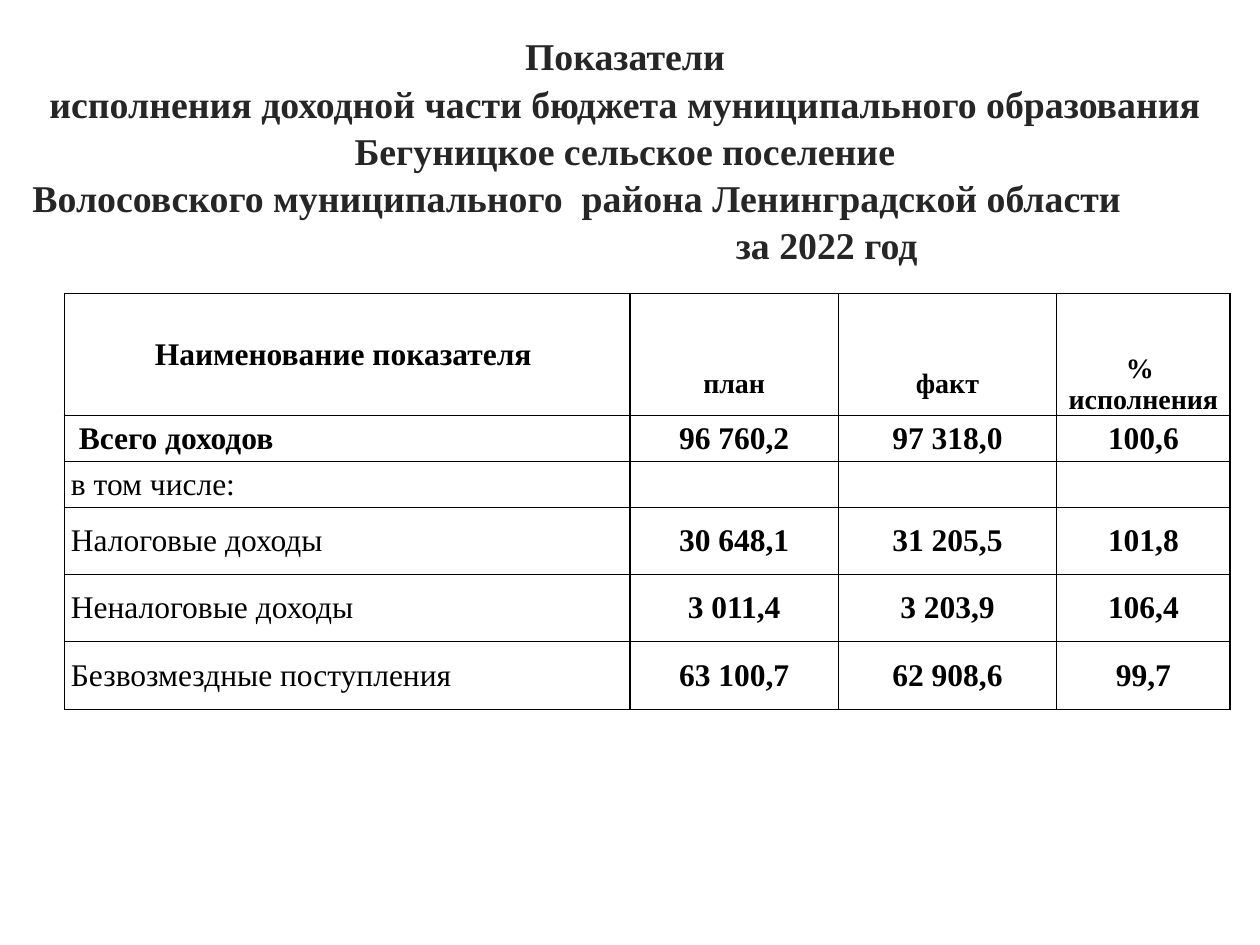
from lxml.etree import SubElement
from pptx import Presentation
from pptx.dml.color import RGBColor
from pptx.enum.text import MSO_ANCHOR, MSO_AUTO_SIZE, PP_ALIGN
from pptx.oxml.ns import qn
from pptx.util import Cm, Pt

COLORS = {"title": "262626", "text": "000000", "line": "000000", "cell": "FFFFFF"}
FONT = "Times New Roman"
LEFT, CENTER = PP_ALIGN.LEFT, PP_ALIGN.CENTER

TITLE = [
    ("Показатели", CENTER, 0),
    ("исполнения доходной части бюджета муниципального образования "
     "Бегуницкое сельское поселение", CENTER, 0),
    ("Волосовского муниципального  района Ленинградской области", LEFT, 0),
    ("за 2022 год", CENTER, 8.13),
]
ROWS = [
    ("Наименование показателя ", "", "", ""),
    ("", "план", "факт", "% \nисполнения"),
    (" Всего доходов", "96 760,2", "97 318,0", "100,6"),
    ("в том числе:", "", "", ""),
    ("Налоговые доходы", "30 648,1", "31 205,5", "101,8"),
    ("Неналоговые доходы", "3 011,4", "3 203,9", "106,4"),
    ("Безвозмездные поступления", "63 100,7", "62 908,6", "99,7"),
]
COLUMN_WIDTHS = [11.4, 4.2, 4.4, 3.5]
ROW_HEIGHTS = [1.2, 1.25, 0.93, 0.93, 1.35, 1.35, 1.37]
HEADER_ROWS = 2
TOTAL_ROW = 2


def style(para, size, color, bold, align):
    """Set the font and alignment of a paragraph."""
    para.alignment = align
    para.font.name = FONT
    para.font.size = Pt(size)
    para.font.bold = bold
    para.font.color.rgb = RGBColor.from_string(COLORS[color])


def add_borders(cell, sides):
    """Draw thin lines on the given sides of a cell and clear the others."""
    props = cell._tc.get_or_add_tcPr()
    for index, side in enumerate("LRTB"):
        line = SubElement(props, qn(f"a:ln{side}"), w=str(Pt(1)))
        props.remove(line)
        props.insert(index, line)
        if side in sides:
            fill = SubElement(line, qn("a:solidFill"))
            SubElement(fill, qn("a:srgbClr"), val=COLORS["line"])
        else:
            SubElement(line, qn("a:noFill"))


def add_title(page):
    """Fill and place the title placeholder."""
    box = page.shapes.title
    box.left, box.top, box.width, box.height = Cm(0.4), Cm(0.58), Cm(24.4), Cm(4.93)
    frame = box.text_frame
    frame.word_wrap = True
    frame.auto_size = MSO_AUTO_SIZE.NONE
    frame.vertical_anchor = MSO_ANCHOR.BOTTOM
    frame.text = "\n".join(text for text, _, _ in TITLE)
    for para, (_, align, indent) in zip(frame.paragraphs, TITLE):
        style(para, 21.6, "title", True, align)
        para.line_spacing = 1.04
        para.space_before = Pt(0)
        if indent:
            para._p.get_or_add_pPr().set("marL", str(Cm(indent)))


def fill_cell(cell, text, row, column):
    """Write one table cell with its fill, margins and borders."""
    cell.fill.solid()
    cell.fill.fore_color.rgb = RGBColor.from_string(COLORS["cell"])
    cell.vertical_anchor = MSO_ANCHOR.MIDDLE
    cell.margin_left = cell.margin_right = Cm(0.13)
    cell.margin_top = cell.margin_bottom = 0
    cell.text = text
    is_label = column == 0
    is_header = row < HEADER_ROWS
    for para in cell.text_frame.paragraphs:
        style(para, 16 if is_header and not is_label else 18, "text",
              row <= TOTAL_ROW or not is_label,
              LEFT if is_label and not is_header else CENTER)
    sides = "LRTB"
    if is_header and not is_label:
        sides = "LRT" if row == 0 else "LRB"
    add_borders(cell, sides)


def add_indicators(page):
    """Add the table of budget indicators."""
    frame = page.shapes.add_table(
        len(ROWS), len(COLUMN_WIDTHS), Cm(1.3), Cm(5.92),
        Cm(sum(COLUMN_WIDTHS)), Cm(sum(ROW_HEIGHTS)))
    table = frame.table
    table.first_row = table.horz_banding = False
    for column, width in zip(table.columns, COLUMN_WIDTHS):
        column.width = Cm(width)
    for row, height in zip(table.rows, ROW_HEIGHTS):
        row.height = Cm(height)
    for row, texts in enumerate(ROWS):
        for column, text in enumerate(texts):
            fill_cell(table.cell(row, column), text, row, column)
    table.cell(0, 0).merge(table.cell(HEADER_ROWS - 1, 0))


def main():
    """Build the slide and save the deck."""
    deck = Presentation()
    deck.slide_width, deck.slide_height = Cm(25.4), Cm(19.05)
    page = deck.slides.add_slide(deck.slide_layouts[5])
    add_title(page)
    add_indicators(page)
    deck.save("out.pptx")


if __name__ == "__main__":
    main()
